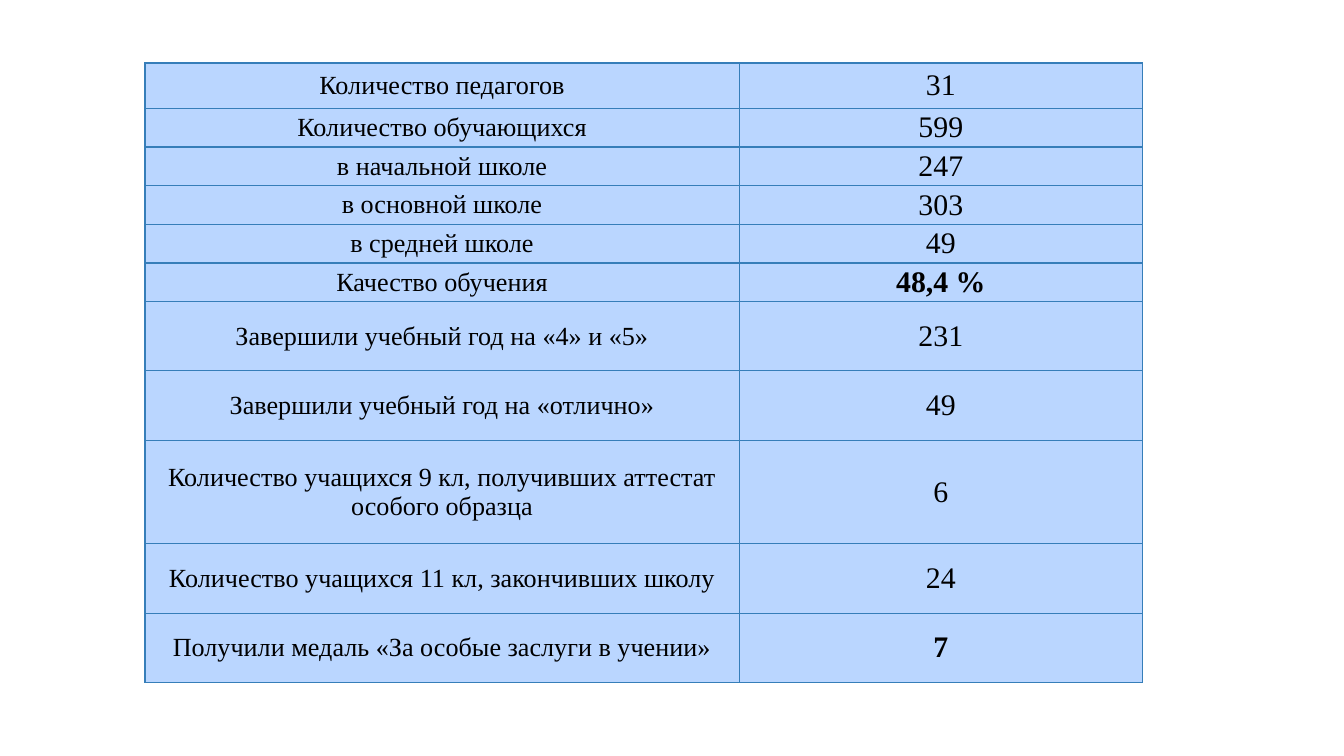
from typing import NamedTuple

from lxml.etree import SubElement
from pptx import Presentation
from pptx.dml.color import RGBColor
from pptx.enum.text import MSO_ANCHOR, PP_ALIGN
from pptx.oxml.ns import qn
from pptx.util import Cm, Pt

FONT = "Times New Roman"
TEXT_COLOR = "000000"
CELL_FILL = "BAD6FF"
BORDER_COLOR = "367EB9"
BORDER_WIDTH = Pt(0.75)
COLUMN_WIDTHS = (11.23, 7.62)
LOW, MEDIUM, TALL = 0.73, 1.31, 1.96  # row heights in cm


class Indicator(NamedTuple):
    label: str
    value: str
    height: float = LOW
    bold: bool = False


INDICATORS = [
    Indicator("Количество педагогов", "31", 0.86),
    Indicator("Количество обучающихся", "599"),
    Indicator("в начальной школе", "247"),
    Indicator("в основной школе", "303"),
    Indicator("в средней школе", "49"),
    Indicator("Качество обучения", "48,4 %", bold=True),
    Indicator("Завершили учебный год на «4» и «5»", "231", MEDIUM),
    Indicator("Завершили учебный год на «отлично»", "49", MEDIUM),
    Indicator("Количество учащихся 9 кл, получивших аттестат особого образца", "6", TALL),
    Indicator("Количество учащихся 11 кл, закончивших школу", "24", MEDIUM),
    Indicator("Получили медаль «За особые заслуги в учении»", "7", MEDIUM, True),
]


def color(value: str) -> RGBColor:
    return RGBColor.from_string(value)


def add_borders(cell) -> None:
    """Draw all four cell borders; they must precede the fill in the XML."""
    properties = cell._tc.get_or_add_tcPr()
    for side in ("a:lnL", "a:lnR", "a:lnT", "a:lnB"):
        line = SubElement(properties, qn(side), w=str(BORDER_WIDTH))
        fill = SubElement(line, qn("a:solidFill"))
        SubElement(fill, qn("a:srgbClr"), val=BORDER_COLOR)


def fill_cell(cell, text: str, size: int, bold: bool = False) -> None:
    add_borders(cell)
    cell.fill.solid()
    cell.fill.fore_color.rgb = color(CELL_FILL)
    cell.margin_left = cell.margin_right = Cm(0.18)
    cell.margin_top = cell.margin_bottom = 0
    cell.vertical_anchor = MSO_ANCHOR.MIDDLE

    para = cell.text_frame.paragraphs[0]
    para.text = text
    para.alignment = PP_ALIGN.CENTER
    font = para.runs[0].font
    font.name = FONT
    font.size = Pt(size)
    font.bold = bold
    font.color.rgb = color(TEXT_COLOR)


def add_indicator_table(page, indicators: list[Indicator]) -> None:
    height = sum(indicator.height for indicator in indicators)
    table = page.shapes.add_table(
        len(indicators), len(COLUMN_WIDTHS),
        Cm(2.74), Cm(1.19), Cm(sum(COLUMN_WIDTHS)), Cm(height),
    ).table
    table.first_row = table.horz_banding = False
    for column, width in zip(table.columns, COLUMN_WIDTHS):
        column.width = Cm(width)
    for row, indicator in zip(table.rows, indicators):
        row.height = Cm(indicator.height)
        label_cell, value_cell = row.cells
        fill_cell(label_cell, indicator.label, 14)
        fill_cell(value_cell, indicator.value, 16, indicator.bold)


def main() -> None:
    deck = Presentation()
    deck.slide_width, deck.slide_height = Cm(25.4), Cm(14.29)

    # Blank layout: the table is the only element
    page = deck.slides.add_slide(deck.slide_layouts[6])
    add_indicator_table(page, INDICATORS)
    deck.save("out.pptx")


if __name__ == "__main__":
    main()
